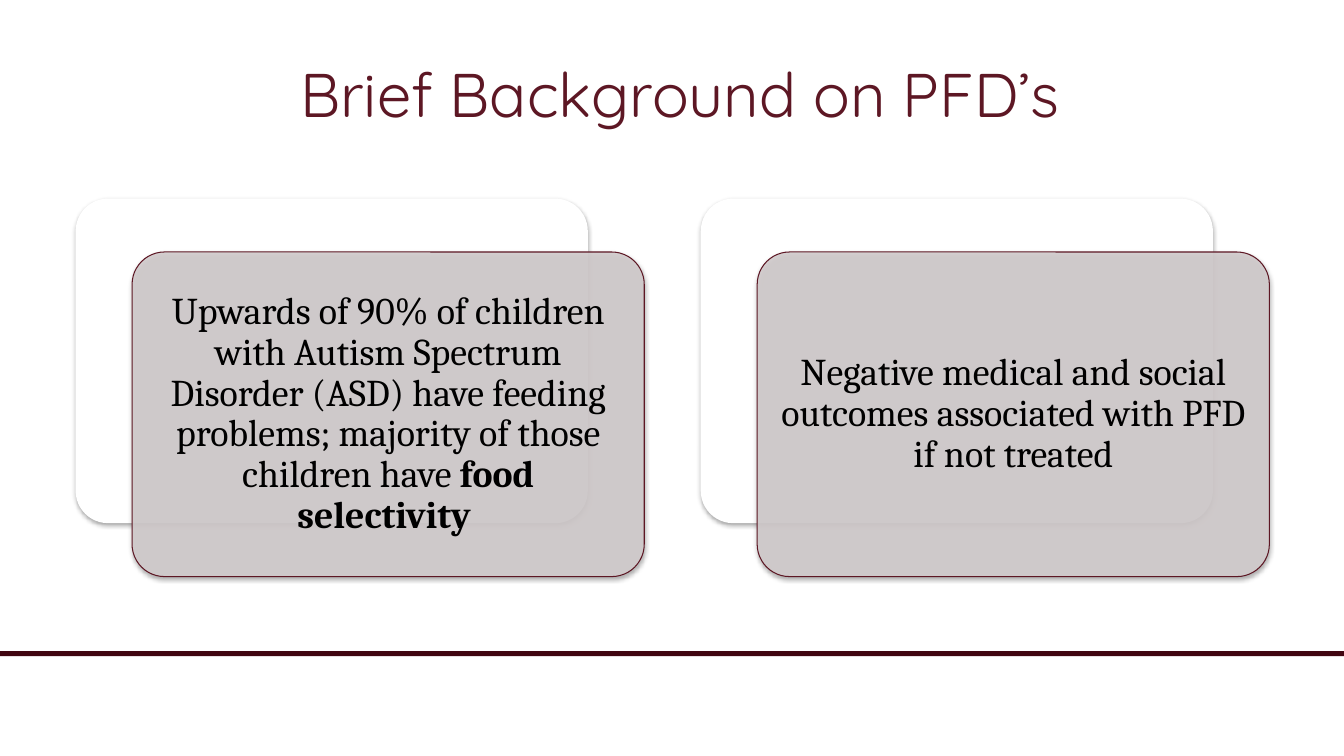
from lxml import etree
from pptx import Presentation, util as u
from pptx.dml.color import RGBColor
from pptx.enum import shapes, text
from pptx.oxml.ns import qn

WIDTH, HEIGHT = 13.33, 7.5
COLORS = {"maroon": "5D1724", "rule": "410611", "card": "D2CCCD",
          "back": "FFFFFF", "ink": "000000"}

# Card grid: two columns, each a back card with a front card offset from it
CARD_W, CARD_H = 5.08, 3.22
CARD_LEFT, CARD_TOP, COLUMN_STEP = 0.75, 1.97, 6.2
OFFSET_X, OFFSET_Y = 0.56, 0.53
TEXT_PAD, TEXT_INSET = 0.095, 0.11

# Each fact is a list of (wording, bold) runs
FACTS = [
    [("Upwards of 90% of children with Autism Spectrum Disorder (ASD) have "
      "feeding problems; majority of those children have ", False),
     ("food selectivity ", True)],
    [("Negative medical and social outcomes associated with PFD "
      "if not treated", False)],
]


def color(name):
    return RGBColor.from_string(COLORS[name])


def box(left, top, width, height):
    return [u.Inches(v) for v in (left, top, width, height)]


def write(frame, runs, *, font, size, ink, inset=None, spacing=None):
    """Fill a text frame with one centred paragraph of (wording, bold) runs."""
    frame.word_wrap = True
    frame.vertical_anchor = text.MSO_ANCHOR.MIDDLE
    if inset is not None:
        frame.margin_left = frame.margin_right = u.Inches(inset)
        frame.margin_top = frame.margin_bottom = u.Inches(inset)
    paragraph = frame.paragraphs[0]
    paragraph.alignment = text.PP_ALIGN.CENTER
    if spacing:
        paragraph.line_spacing = spacing
    for wording, bold in runs:
        run = paragraph.add_run()
        run.text = wording
        run.font.name, run.font.size = font, u.Pt(size)
        run.font.bold = bold
        run.font.color.rgb = color(ink)


def add_panel(parent, kind, place, fill, line=None):
    panel = parent.add_shape(kind, *box(*place))
    panel.shadow.inherit = False
    panel.fill.solid()
    panel.fill.fore_color.rgb = color(fill)
    if line:
        panel.line.color.rgb = color(line)
        panel.line.width = u.Pt(0.75)
    else:
        panel.line.fill.background()
    return panel


def add_alpha(color_element, percent):
    etree.SubElement(color_element, qn("a:alpha"), val=str(percent * 1000))


def add_card(parent, left, top, fill, line=None, opacity=None):
    card = add_panel(parent, shapes.MSO_SHAPE.ROUNDED_RECTANGLE,
                     (left, top, CARD_W, CARD_H), fill, line)
    card.adjustments[0] = 0.1
    properties = card._element.spPr
    if opacity:
        add_alpha(properties.find(qn("a:solidFill"))[0], opacity)
    # Soft shadow straight below the card
    shadow = etree.SubElement(
        properties.find(qn("a:effectLst")), qn("a:outerShdw"),
        blurRad=str(u.Pt(3.1)), dist=str(u.Pt(1.8)), dir="5400000",
        rotWithShape="0")
    add_alpha(etree.SubElement(shadow, qn("a:srgbClr"), val=COLORS["ink"]), 35)


def add_fact(parent, column, runs):
    left = CARD_LEFT + column * COLUMN_STEP
    add_card(parent, left, CARD_TOP, "back")
    left, top = left + OFFSET_X, CARD_TOP + OFFSET_Y
    add_card(parent, left, top, "card", line="maroon", opacity=90)
    wording = parent.add_textbox(*box(
        left + TEXT_PAD, top + TEXT_PAD,
        CARD_W - 2 * TEXT_PAD, CARD_H - 2 * TEXT_PAD))
    write(wording.text_frame, runs, font="Cambria", size=27, ink="ink",
          inset=TEXT_INSET, spacing=0.9)


def main():
    deck = Presentation()
    deck.slide_width, deck.slide_height = u.Inches(WIDTH), u.Inches(HEIGHT)
    slide = deck.slides.add_slide(deck.slide_layouts[5])

    # Title
    title = slide.shapes.title
    title.left, title.top, title.width, title.height = box(0.82, 0.3, 11.85, 1.25)
    write(title.text_frame, [("Brief Background on PFD’s", False)],
          font="Quicksand", size=44, ink="maroon")

    # Rule across the foot of the slide
    add_panel(slide.shapes, shapes.MSO_SHAPE.RECTANGLE,
              (0, 6.46, WIDTH, 0.05), "rule")

    # Fact cards
    cards = slide.shapes.add_group_shape().shapes
    for column, runs in enumerate(FACTS):
        add_fact(cards, column, runs)

    deck.save("out.pptx")


if __name__ == "__main__":
    main()
